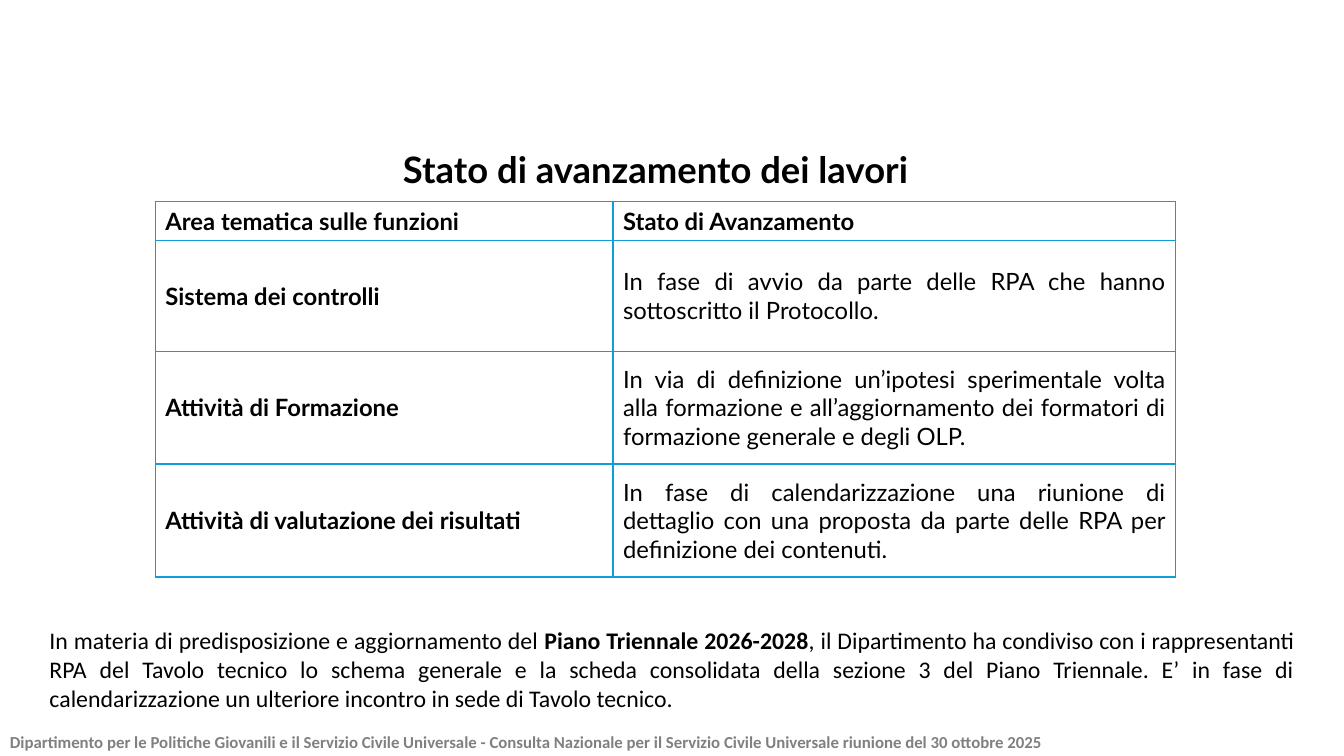
import pptx
import pptx.util
import pptx.dml.color
import pptx.enum.text
import pptx.oxml
import pptx.oxml.ns

BLACK = pptx.dml.color.RGBColor(0x00, 0x00, 0x00)
GREY = pptx.dml.color.RGBColor(0x80, 0x80, 0x80)
WHITE = pptx.dml.color.RGBColor(0xFF, 0xFF, 0xFF)
BLUE = pptx.dml.color.RGBColor(0x0F, 0x9E, 0xD5)

WIDTH = pptx.util.Inches(13.33)
HEIGHT = pptx.util.Inches(7.5)

ALIGN = pptx.enum.text.PP_ALIGN
ANCHOR = pptx.enum.text.MSO_ANCHOR

TITLE = {"name": "Lato", "size": pptx.util.Pt(26), "bold": True, "color": BLACK}
LABEL = {**TITLE, "size": pptx.util.Pt(17)}
STATUS = {**LABEL, "bold": False}
NOTE = {**STATUS, "name": "Calibri"}
NOTE_STRONG = {**NOTE, "bold": True}
FOOTER = {"name": "Calibri", "size": pptx.util.Pt(12), "bold": True, "color": GREY}

AREA_BORDERS = {side: (BLUE, 1) for side in "LRTB"}
NOTE_BORDERS = {"L": (WHITE, 1), "R": (WHITE, 1), "T": (WHITE, 1), "B": (WHITE, 3)}

HEADINGS = ("Area tematica sulle funzioni", "Stato di Avanzamento")
AREAS = [
    ("Sistema dei controlli",
     "In fase di avvio da parte delle RPA che hanno sottoscritto il Protocollo."),
    ("Attività di Formazione",
     "In via di definizione un’ipotesi sperimentale volta alla formazione e "
     "all’aggiornamento dei formatori di formazione generale e degli OLP."),
    ("Attività di valutazione dei risultati",
     "In fase di calendarizzazione una riunione di dettaglio con una proposta "
     "da parte delle RPA per definizione dei contenuti."),
]
NOTE_SPANS = [
    ("In materia di predisposizione e aggiornamento del ", NOTE),
    ("Piano Triennale 2026-2028", NOTE_STRONG),
    (", il Dipartimento ha condiviso con i rappresentanti RPA del Tavolo tecnico "
     "lo schema generale e la scheda consolidata della sezione 3 del Piano Triennale. "
     "E’ in fase di calendarizzazione un ulteriore incontro in sede di Tavolo tecnico.",
     NOTE),
]


def across(percent):
    return round(WIDTH * percent / 100)


def down(percent):
    return round(HEIGHT * percent / 100)


def write(frame, spans, align):
    para = frame.paragraphs[0]
    para.alignment = align
    for text, style in spans:
        span = para.add_run()
        span.text = text
        for attribute, value in style.items():
            if attribute == "color":
                span.font.color.rgb = value
            else:
                setattr(span.font, attribute, value)


def add_text(page, left, top, width, height, spans, align, anchor):
    box = page.shapes.add_textbox(across(left), down(top), across(width), down(height))
    box.text_frame.word_wrap = True
    box.text_frame.vertical_anchor = anchor
    write(box.text_frame, spans, align)


def set_borders(cell, borders):
    properties = cell._tc.get_or_add_tcPr()
    for side, (color, points) in borders.items():
        properties.append(pptx.oxml.parse_xml(
            f'<a:ln{side} {pptx.oxml.ns.nsdecls("a")} w="{pptx.util.Pt(points)}">'
            f'<a:solidFill><a:srgbClr val="{color}"/></a:solidFill></a:ln{side}>'))


def add_table(page, left, top, columns, rows, cells, borders, anchor):
    table = page.shapes.add_table(
        len(rows), len(columns), across(left), down(top),
        across(sum(columns)), down(sum(rows))).table
    table.first_row = False
    table.horz_banding = False
    for column, share in zip(table.columns, columns):
        column.width = across(share)
    for row, share, contents in zip(table.rows, rows, cells):
        row.height = down(share)
        for cell, (spans, align) in zip(row.cells, contents):
            cell.vertical_anchor = anchor
            set_borders(cell, borders)
            cell.fill.background()
            write(cell.text_frame, spans, align)


def main():
    deck = pptx.Presentation()
    deck.slide_width = WIDTH
    deck.slide_height = HEIGHT
    page = deck.slides.add_slide(deck.slide_layouts[6])

    add_text(page, 0, 96.13, 84.4, 3.87, [
        ("Dipartimento per le Politiche Giovanili e il Servizio Civile Universale - "
         "Consulta Nazionale per il Servizio Civile Universale "
         "riunione del 30 ottobre 2025", FOOTER)], ALIGN.LEFT, ANCHOR.MIDDLE)
    add_text(page, 4.2, 18.8, 89.2, 7.2,
             [("Stato di avanzamento dei lavori", TITLE)], ALIGN.CENTER, ANCHOR.TOP)

    heading_cells = [([(text, LABEL)], ALIGN.LEFT) for text in HEADINGS]
    area_cells = [
        [([(area, LABEL)], ALIGN.LEFT), ([(status, STATUS)], ALIGN.JUSTIFY)]
        for area, status in AREAS]
    add_table(page, 11.55, 26.67, [34.06, 41.86], [5.07, 14.67, 14.93, 14.93],
              [heading_cells, *area_cells], AREA_BORDERS, ANCHOR.MIDDLE)
    add_table(page, 2.93, 82.27, [94.15], [14.8],
              [[(NOTE_SPANS, ALIGN.JUSTIFY)]], NOTE_BORDERS, ANCHOR.TOP)

    deck.save("out.pptx")


if __name__ == "__main__":
    main()
